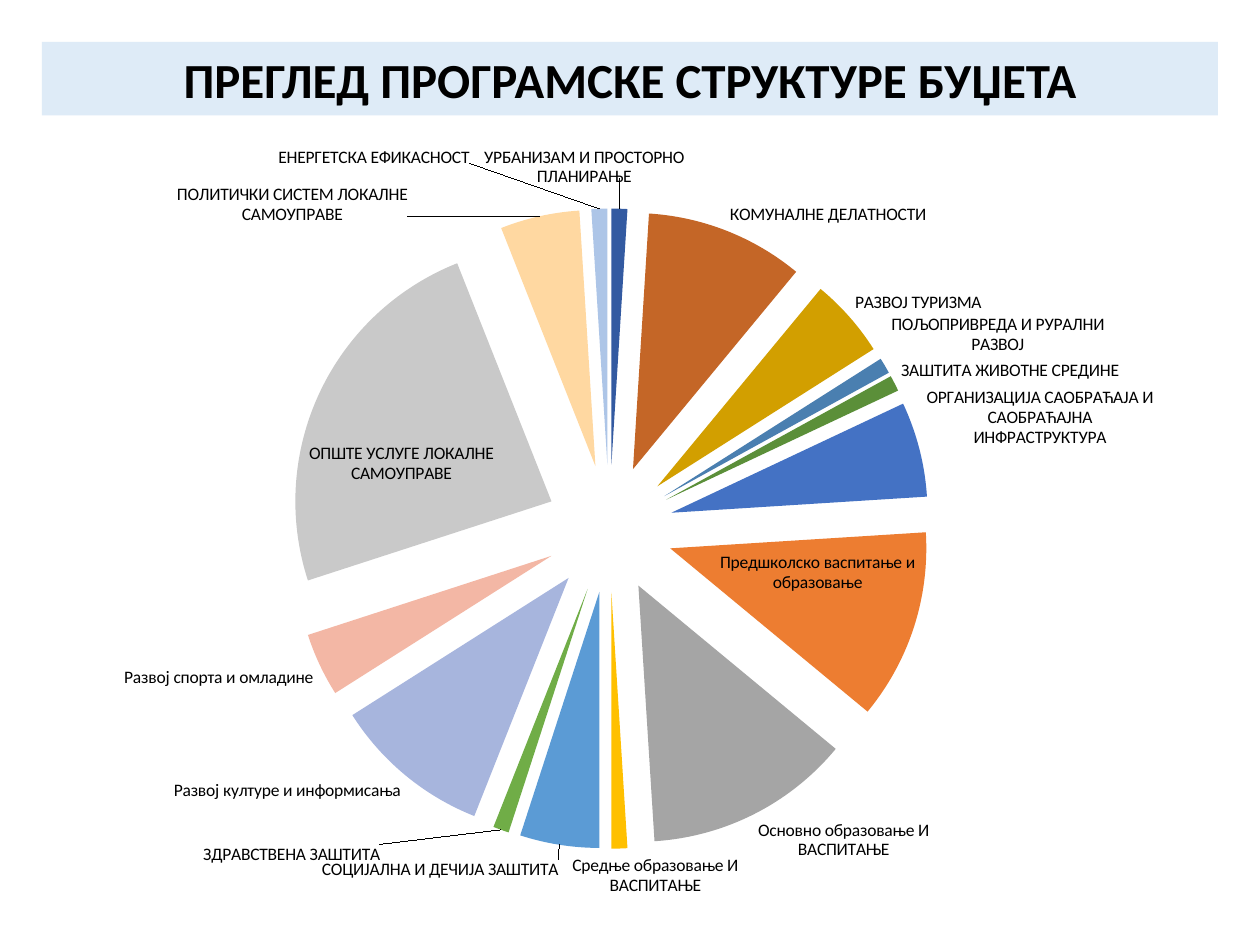
from pptx import Presentation
from pptx.chart.data import CategoryChartData
from pptx.dml.color import RGBColor
from pptx.enum.chart import XL_CHART_TYPE, XL_LABEL_POSITION
from pptx.enum.shapes import MSO_SHAPE
from pptx.enum.text import MSO_ANCHOR, PP_ALIGN
from pptx.oxml import parse_xml
from pptx.oxml.ns import nsdecls, qn
from pptx.util import Inches, Pt

PIE = XL_CHART_TYPE.PIE_EXPLODED
BEST_FIT = XL_LABEL_POSITION.BEST_FIT
RECT = MSO_SHAPE.RECTANGLE
BOTTOM = MSO_ANCHOR.BOTTOM
CENTER = PP_ALIGN.CENTER

FONT = "Calibri"
WIDTH, HEIGHT = Inches(10), Inches(7.5)
COLORS = {"band": "DEEBF7", "text": "000000"}
TITLE_BOX = (0.0333, 0.0444, 0.9333, 0.0778)
CHART_BOX = (0.032, 0.156, 0.941, 0.807)
PLOT_BOX = {"x": 0.21, "y": 0.08, "w": 0.54, "h": 0.84}
EXPLOSION = 25
LABEL_EXT = "{CE6537A1-D6FC-4f65-9D91-7224C49458BB}"
C15 = "http://schemas.microsoft.com/office/drawing/2012/chart"

PROGRAMS = [
    ("УРБАНИЗАМ И ПРОСТОРНО ПЛАНИРАЊЕ", 1, "335AA1"),
    ("КОМУНАЛНЕ ДЕЛАТНОСТИ", 10, "C46627"),
    ("ЛОКАЛНИ ЕКОНОМСКИ РАЗВОЈ", 0, "848484"),
    ("РАЗВОЈ ТУРИЗМА", 5, "D29F00"),
    ("ПОЉОПРИВРЕДА И РУРАЛНИ РАЗВОЈ", 1, "4A7FB0"),
    ("ЗАШТИТА ЖИВОТНЕ СРЕДИНЕ", 1, "5B8F39"),
    ("ОРГАНИЗАЦИЈА САОБРАЋАЈА И САОБРАЋАЈНА ИНФРАСТРУКТУРА", 6, "4472C4"),
    ("Предшколско васпитање и образовање", 12, "ED7D31"),
    ("Основно образовање И ВАСПИТАЊЕ", 13, "A5A5A5"),
    ("Средње образовање И ВАСПИТАЊЕ", 1, "FFC000"),
    ("СОЦИЈАЛНА И ДЕЧИЈА ЗАШТИТА", 5, "5B9BD5"),
    ("ЗДРАВСТВЕНА ЗАШТИТА", 1, "70AD47"),
    ("Развој културе и информисања", 10, "A7B5DD"),
    ("Развој спорта и омладине", 4, "F3B7A5"),
    ("ОПШТЕ УСЛУГЕ ЛОКАЛНЕ САМОУПРАВЕ", 24, "C9C9C9"),
    ("ПОЛИТИЧКИ СИСТЕМ ЛОКАЛНЕ САМОУПРАВЕ", 5, "FFD8A1"),
    ("ЕНЕРГЕТСКА ЕФИКАСНОСТ", 1, "ADC5E7"),
]
LABEL_SHIFTS = {0: (-0.03, -0.03), 4: (0, -0.01), 9: (0.03, 0),
                10: (0, 0.01), 11: (-0.1, 0.01), 15: (-0.11, 0.02),
                16: (-0.19, -0.05)}
LABEL_SIZES = {10: (0.16, 0.06), 15: (0.16, 0.06)}
HIDDEN_LABELS = [2]


def rgb(name):
    """Return the colour for a palette name or a hex string."""
    return RGBColor.from_string(COLORS.get(name, name))


def place(box):
    """Turn shares of the slide into left, top, width and height."""
    return [round(share * side) for share, side in zip(box, (WIDTH, HEIGHT) * 2)]


def set_font(font, size, bold=False):
    """Apply the slide's text style to a font."""
    style = {"name": FONT, "size": Pt(size), "bold": bold}
    for key, value in style.items():
        setattr(font, key, value)
    font.color.rgb = rgb("text")


def add_title(s, box, text):
    """Draw the title band in its box."""
    sp = s.shapes.add_shape(RECT, *place(box))
    sp.shadow.inherit = False
    sp.fill.solid()
    sp.fill.fore_color.rgb = rgb("band")
    sp.line.fill.background()
    tf = sp.text_frame
    tf.word_wrap = True
    tf.vertical_anchor = BOTTOM
    p = tf.paragraphs[0]
    p.alignment = CENTER
    p.line_spacing = 0.9
    r = p.add_run()
    r.text = text
    set_font(r.font, 28, True)


def layout_xml(values, target="", prefix="c"):
    """Return a manual chart layout as XML text."""
    parts = "".join(f'<c:{key} val="{value}"/>' for key, value in values.items())
    return (f'<{prefix}:layout {nsdecls("c")} xmlns:c15="{C15}"><c:manualLayout>'
            f"{target}{parts}</c:manualLayout></{prefix}:layout>")


def label_xml(index):
    """Return the label element of one moved or hidden label."""
    if index in HIDDEN_LABELS:
        body = '<c:delete val="1"/>'
    else:
        flags = {"LegendKey": 0, "Val": 0, "CatName": 1, "SerName": 0,
                 "Percent": 0, "BubbleSize": 0}
        body = layout_xml(dict(zip("xy", LABEL_SHIFTS[index])))
        body += '<c:dLblPos val="bestFit"/>'
        body += "".join(f'<c:show{key} val="{flag}"/>' for key, flag in flags.items())
        if index in LABEL_SIZES:
            size = layout_xml(dict(zip("wh", LABEL_SIZES[index])), prefix="c15")
            body += f'<c:extLst><c:ext uri="{LABEL_EXT}">{size}</c:ext></c:extLst>'
    return parse_xml(f'<c:dLbl {nsdecls("c")}><c:idx val="{index}"/>{body}</c:dLbl>')


def add_labels(series):
    """Label the slices with category names and leader lines."""
    labels = series.data_labels
    labels.show_category_name = True
    labels.show_value = False
    labels.number_format = "#,##0"
    labels.number_format_is_linked = False
    labels.position = BEST_FIT
    set_font(labels.font, 10)
    element = series._element.find(qn("c:dLbls"))
    for place_no, index in enumerate(sorted([*LABEL_SHIFTS, *HIDDEN_LABELS])):
        element.insert(place_no, label_xml(index))
    leader = element.find(qn("c:showLeaderLines"))
    if leader is None:
        leader = parse_xml(f'<c:showLeaderLines {nsdecls("c")}/>')
        element.append(leader)
    leader.set("val", "1")


def add_budget_pie(s, box):
    """Draw the exploded pie of budget programs in its box."""
    data = CategoryChartData(number_format="#,##0")
    data.categories = [name for name, _, _ in PROGRAMS]
    data.add_series("Series 1", [value for _, value, _ in PROGRAMS])
    chart = s.shapes.add_chart(PIE, *place(box), data).chart
    chart.has_legend = False
    chart.has_title = False
    set_font(chart.font, 10)
    plot = chart.plots[0]
    plot.vary_by_categories = True
    series = plot.series[0]
    for index, (_, _, color) in enumerate(PROGRAMS):
        fill = series.points[index].format.fill
        fill.solid()
        fill.fore_color.rgb = rgb(color)
    series._element.find(qn("c:explosion")).set("val", str(EXPLOSION))
    add_labels(series)
    area = chart._chartSpace.chart.plotArea
    for old in area.findall(qn("c:layout")):
        area.remove(old)
    target = ('<c:layoutTarget val="inner"/><c:xMode val="edge"/>'
              '<c:yMode val="edge"/>')
    area.insert(0, parse_xml(layout_xml(PLOT_BOX, target)))


def main():
    """Build the budget slide and save it."""
    prs = Presentation()
    prs.slide_width, prs.slide_height = WIDTH, HEIGHT
    s = prs.slides.add_slide(prs.slide_layouts[6])
    add_title(s, TITLE_BOX, "ПРЕГЛЕД ПРОГРАМСКЕ СТРУКТУРЕ БУЏЕТА")
    add_budget_pie(s, CHART_BOX)
    prs.save("out.pptx")


if __name__ == "__main__":
    main()
